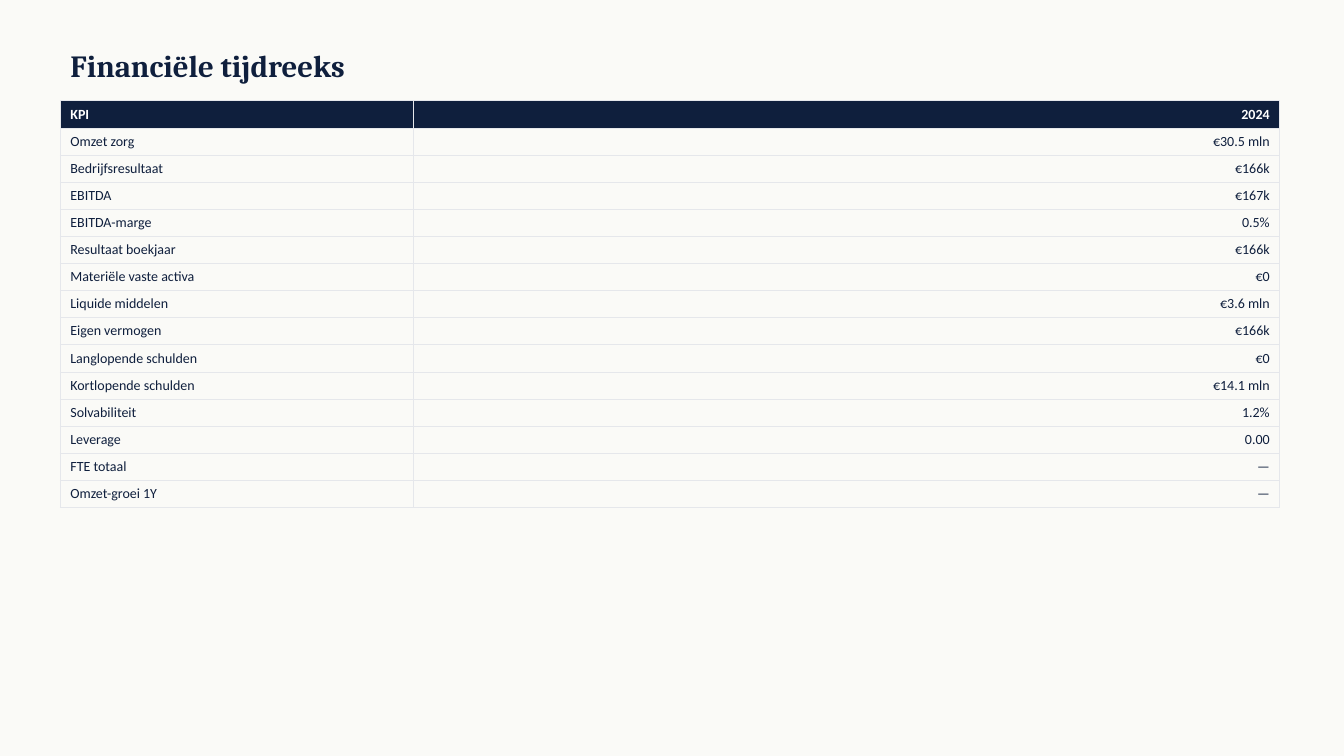
from lxml import etree
from pptx import Presentation
from pptx.dml.color import RGBColor
from pptx.enum.text import MSO_ANCHOR, MSO_AUTO_SIZE, PP_ALIGN
from pptx.oxml.ns import qn
from pptx.util import Cm, Pt

LEFT, RIGHT = PP_ALIGN.LEFT, PP_ALIGN.RIGHT
MIDDLE = MSO_ANCHOR.MIDDLE
NO_AUTOFIT = MSO_AUTO_SIZE.NONE

NAVY, WHITE, CREAM, GREY = "0F1F3D", "FFFFFF", "FAFAF7", "E5E7EB"
TITLE_ONLY = 5
ROW_HEIGHT = Cm(0.68)

ROWS = [
    ("KPI", "2024"),
    ("Omzet zorg", "€30.5 mln"),
    ("Bedrijfsresultaat", "€166k"),
    ("EBITDA", "€167k"),
    ("EBITDA-marge", "0.5%"),
    ("Resultaat boekjaar", "€166k"),
    ("Materiële vaste activa", "€0"),
    ("Liquide middelen", "€3.6 mln"),
    ("Eigen vermogen", "€166k"),
    ("Langlopende schulden", "€0"),
    ("Kortlopende schulden", "€14.1 mln"),
    ("Solvabiliteit", "1.2%"),
    ("Leverage", "0.00"),
    ("FTE totaal", "—"),
    ("Omzet-groei 1Y", "—"),
]


def style_text(para, font_name, size, color, bold, align):
    para.alignment = align
    for span in para.runs:
        span.font.name = font_name
        span.font.size = Pt(size)
        span.font.bold = bold
        span.font.color.rgb = RGBColor.from_string(color)


def add_borders(cell, color, width):
    properties = cell._tc.get_or_add_tcPr()
    for side in ("a:lnL", "a:lnR", "a:lnT", "a:lnB"):
        line = etree.SubElement(properties, qn(side), w=str(Pt(width)))
        fill = etree.SubElement(line, qn("a:solidFill"))
        etree.SubElement(fill, qn("a:srgbClr"), val=color)


# Page
deck = Presentation()
deck.slide_width, deck.slide_height = Cm(33.87), Cm(19.05)
page = deck.slides.add_slide(deck.slide_layouts[TITLE_ONLY])
page.background.fill.solid()
page.background.fill.fore_color.rgb = RGBColor.from_string(CREAM)

# Title
title = page.shapes.title
title.left, title.top = Cm(1.52), Cm(1.02)
title.width, title.height = Cm(30.48), Cm(1.27)
title.text_frame.text = "Financiële tijdreeks"
title.text_frame.auto_size = NO_AUTOFIT
title.text_frame.vertical_anchor = MIDDLE
style_text(title.text_frame.paragraphs[0], "Cambria", 22, NAVY, True, LEFT)

# KPI table
table = page.shapes.add_table(len(ROWS), 2, Cm(1.52), Cm(2.54), Cm(30.73),
                              ROW_HEIGHT * len(ROWS)).table
table.horz_banding = False
table.columns[0].width, table.columns[1].width = Cm(8.89), Cm(21.84)

for row_index, texts in enumerate(ROWS):
    is_header = row_index == 0
    table.rows[row_index].height = ROW_HEIGHT
    for column_index, (text, align) in enumerate(zip(texts, (LEFT, RIGHT))):
        cell = table.cell(row_index, column_index)
        cell.text_frame.text = text
        style_text(cell.text_frame.paragraphs[0], "Calibri", 10,
                   WHITE if is_header else NAVY, is_header, align)
        add_borders(cell, GREY, 0.5)
        if is_header:
            cell.fill.solid()
            cell.fill.fore_color.rgb = RGBColor.from_string(NAVY)
        else:
            cell.fill.background()

deck.save("out.pptx")
